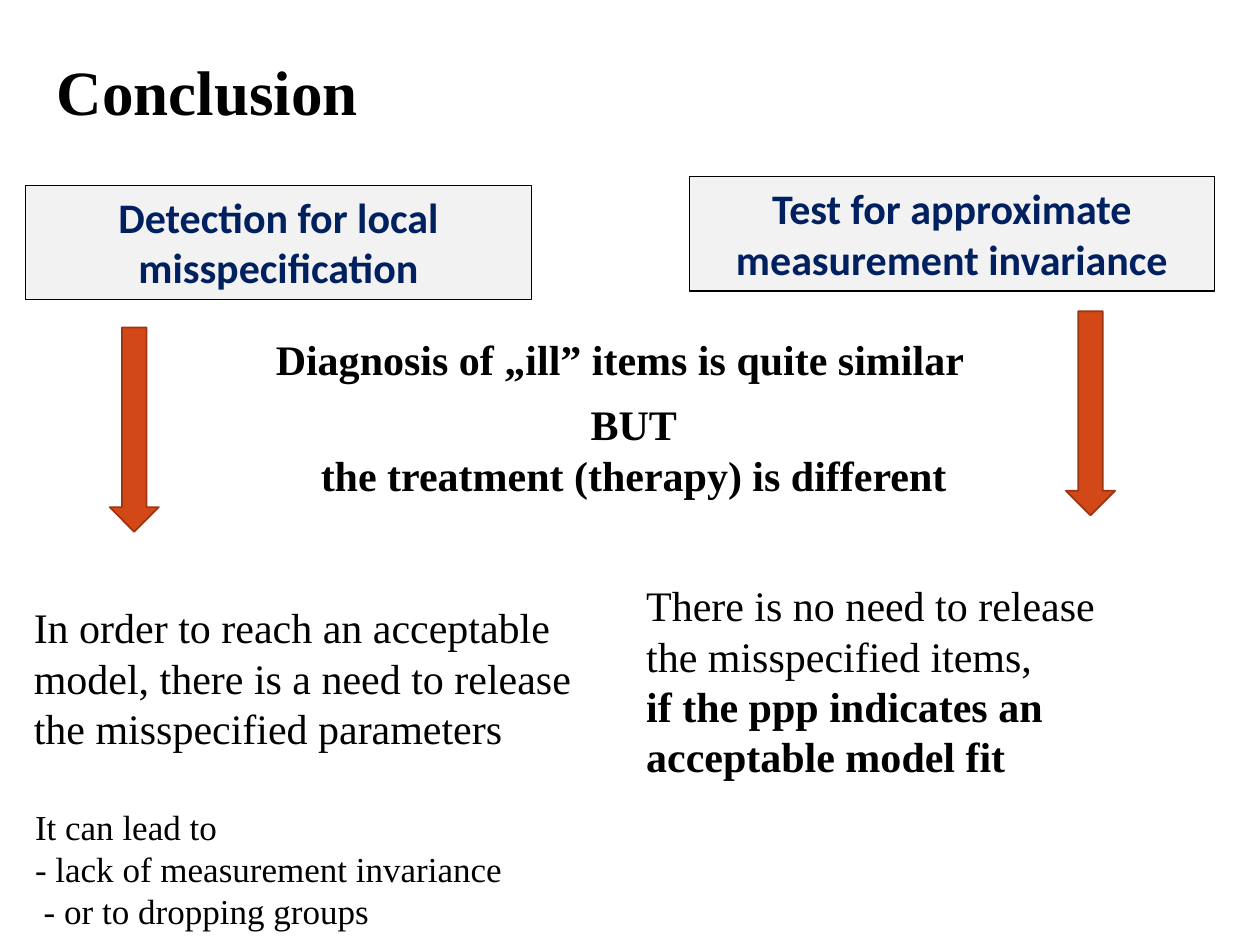
from pptx import Presentation
from pptx.dml.color import RGBColor
from pptx.enum.shapes import MSO_SHAPE
from pptx.enum.text import MSO_ANCHOR, PP_ALIGN
from pptx.util import Pt

PX = 9144  # EMU per px, 100 px to the inch
TITLE_ONLY = 5
LEFT, CENTER = PP_ALIGN.LEFT, PP_ALIGN.CENTER
TOP, MIDDLE = MSO_ANCHOR.TOP, MSO_ANCHOR.MIDDLE
RECTANGLE, DOWN_ARROW = MSO_SHAPE.RECTANGLE, MSO_SHAPE.DOWN_ARROW

BLACK = RGBColor(0x00, 0x00, 0x00)
NAVY = RGBColor(0x00, 0x20, 0x60)
PALE_GREY = RGBColor(0xF2, 0xF2, 0xF2)
ORANGE = RGBColor(0xD3, 0x48, 0x17)
RUST = RGBColor(0x9C, 0x35, 0x11)
SERIF, SANS = "Times New Roman", "Calibri"


def emu(*lengths):
    return [length * PX for length in lengths]


def write(shape, lines, size=24, font=SERIF, color=BLACK, align=LEFT, anchor=MIDDLE):
    """Fill a shape with one paragraph for each (text, bold) line."""
    frame = shape.text_frame
    frame.word_wrap = True
    frame.vertical_anchor = anchor
    for index, (text, bold) in enumerate(lines):
        paragraph = frame.add_paragraph() if index else frame.paragraphs[0]
        paragraph.alignment = align
        run = paragraph.add_run()
        run.text = text
        run.font.size = Pt(size)
        run.font.name = font
        run.font.bold = bold
        run.font.color.rgb = color


def add_text(slide, box, lines, **style):
    write(slide.shapes.add_textbox(*emu(*box)), lines, **style)


def add_block(slide, preset, box, fill, outline, weight):
    block = slide.shapes.add_shape(preset, *emu(*box))
    block.shadow.inherit = False
    block.fill.solid()
    block.fill.fore_color.rgb = fill
    block.line.color.rgb = outline
    block.line.width = Pt(weight)
    return block


def add_title(slide, box, text):
    title = slide.shapes.title
    title.left, title.top, title.width, title.height = emu(*box)
    write(title, [(text, True)], size=36)


def add_approach(slide, box, heading, arrow_offset, outcome_offset, outcome_size, outcome):
    """Place a heading box, the arrow below it and the outcome it leads to."""
    left, top, _, _ = box
    heading_box = add_block(slide, RECTANGLE, box, PALE_GREY, BLACK, 0.75)
    write(heading_box, [(heading, True)], font=SANS, color=NAVY, align=CENTER, anchor=TOP)
    arrow_x, arrow_y = arrow_offset
    add_block(slide, DOWN_ARROW, (left + arrow_x, top + arrow_y, 39, 162), ORANGE, RUST, 1)
    outcome_x, outcome_y = outcome_offset
    add_text(slide, (left + outcome_x, top + outcome_y, *outcome_size), outcome)


def add_comparison(slide, box):
    left, top, width, _ = box
    add_text(slide, (left, top, width, 50),
             [("Diagnosis of „ill” items is quite similar", True)])
    add_text(slide, (left + 21, top + 51, width - 22, 91),
             [("BUT", True), ("the treatment (therapy) is different", True)],
             align=CENTER)


def main():
    deck = Presentation()
    deck.slide_width, deck.slide_height = emu(1000, 750)
    slide = deck.slides.add_slide(deck.slide_layouts[TITLE_ONLY])

    add_title(slide, (35, 36, 308, 71), "Conclusion")
    add_approach(
        slide, (20, 147, 402, 91), "Detection for local misspecification",
        (67, 113), (-3, 325), (486, 131),
        [("In order to reach an acceptable model, there is a need to release "
          "the misspecified parameters", False)])
    add_approach(
        slide, (547, 140, 417, 91), "Test for approximate measurement invariance",
        (299, 107), (-44, 314), (485, 172),
        [("There is no need to release", False),
         ("the misspecified items,", False),
         ("if the ppp indicates an acceptable model fit", True)])
    add_comparison(slide, (209, 260, 568, 142))
    add_text(slide, (18, 634, 417, 111),
             [("It can lead to", False),
              ("- lack of measurement invariance", False),
              (" - or to dropping groups", False)], size=20)

    deck.save("out.pptx")


if __name__ == "__main__":
    main()
